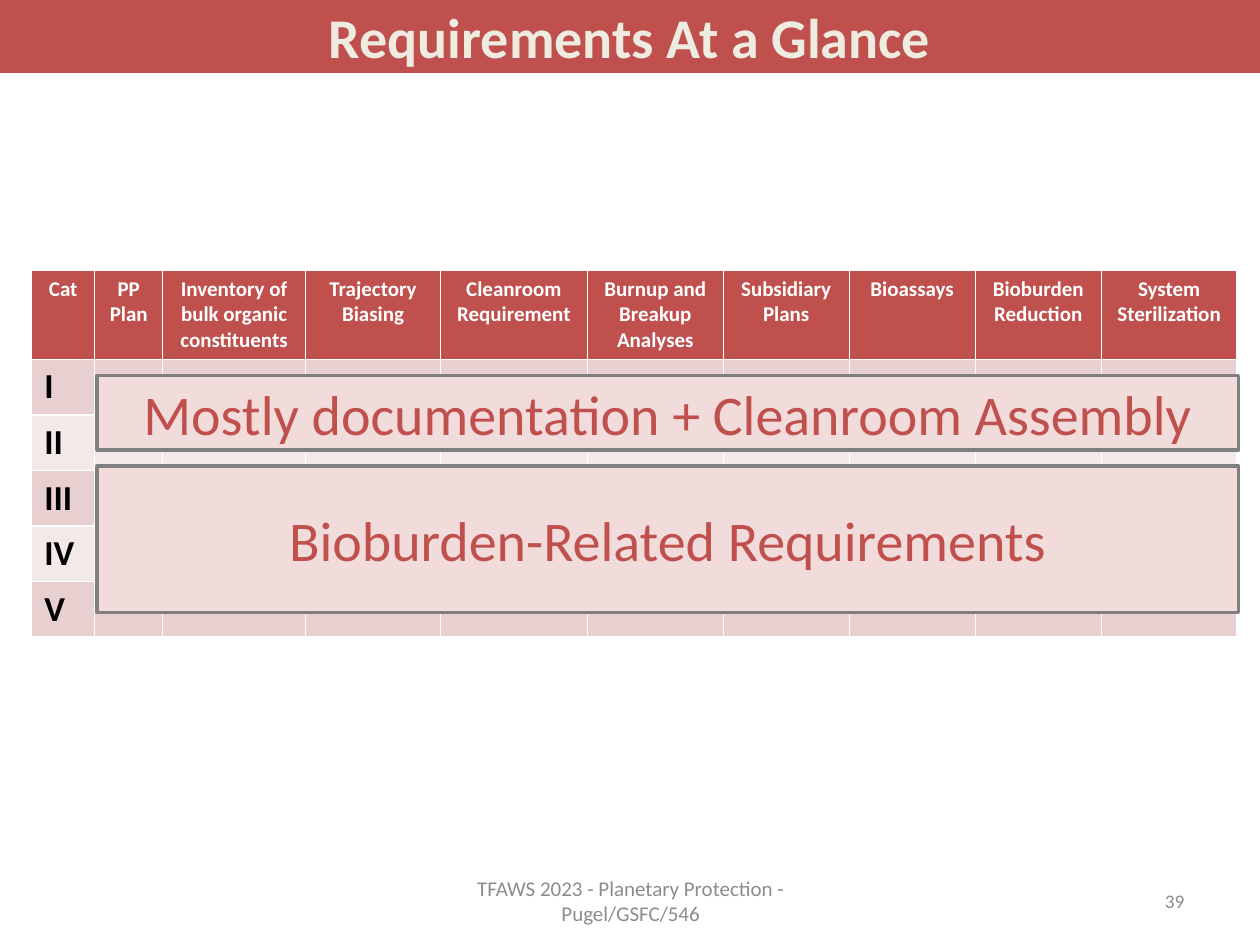
"""Build the "Requirements At a Glance" slide."""
from dataclasses import dataclass

from pptx import Presentation
from pptx.dml.color import RGBColor
from pptx.enum.shapes import MSO_SHAPE
from pptx.enum.text import MSO_ANCHOR, MSO_AUTO_SIZE, PP_ALIGN
from pptx.shapes.autoshape import Shape
from pptx.slide import Slide
from pptx.text.text import TextFrame
from pptx.util import Cm, Pt

RED = "C0504D"
CREAM = "EEECE1"
PINK = "F2DCDB"
GREY = "808080"
FOOTER_GREY = "8C8C8C"
BAND_FILLS = ("E8D0D0", "F4E9E9")
HEADER_HEIGHT, ROW_HEIGHT = 1.77, 1.1
CATEGORIES = ("I", "II", "III", "IV", "V")


@dataclass(frozen=True)
class Box:
    text: str
    left: float
    top: float
    width: float
    height: float


@dataclass(frozen=True)
class Column:
    heading: str
    width: float


TITLE = Box("Requirements At a Glance", 0, 0, 25.4, 1.47)
BANNERS = (
    Box("Bioburden-Related Requirements", 1.96, 9.4, 23.01, 2.95),
    Box("Mostly documentation + Cleanroom Assembly", 1.96, 7.57, 23.01, 1.5),
)
FOOTER = Box("TFAWS 2023 - Planetary Protection - Pugel/GSFC/546", 8.69, 17.65, 8.05, 1.02)
PAGE_NUMBER = Box("39", 18.21, 17.65, 5.92, 1.02)
COLUMNS = (
    Column("Cat", 1.27),
    Column("PP Plan", 1.37),
    Column("Inventory of bulk organic constituents", 2.88),
    Column("Trajectory Biasing", 2.72),
    Column("Cleanroom Requirement", 2.96),
    Column("Burnup and Breakup Analyses", 2.74),
    Column("Subsidiary Plans", 2.54),
    Column("Bioassays", 2.54),
    Column("Bioburden Reduction", 2.54),
    Column("System Sterilization", 2.74),
)


def color(value: str) -> RGBColor:
    """Turn a hex string into a colour."""
    return RGBColor.from_string(value)


def write(frame: TextFrame, text: str, *, size: float, ink: str, bold: bool = False,
          align: PP_ALIGN = PP_ALIGN.CENTER) -> None:
    """Put one formatted paragraph into a text frame."""
    paragraph = frame.paragraphs[0]
    paragraph.alignment = align
    run = paragraph.add_run()
    run.text = text
    run.font.name = "Calibri"
    run.font.size = Pt(size)
    run.font.bold = bold
    run.font.color.rgb = color(ink)


def bounds(box: Box) -> tuple[Cm, Cm, Cm, Cm]:
    """Return the position and size of a box as lengths."""
    return Cm(box.left), Cm(box.top), Cm(box.width), Cm(box.height)


def center_vertically(shape: Shape) -> None:
    """Wrap the text of a shape and anchor it in the middle."""
    frame = shape.text_frame
    frame.word_wrap = True
    frame.auto_size = MSO_AUTO_SIZE.NONE
    frame.vertical_anchor = MSO_ANCHOR.MIDDLE


def add_title(slide: Slide) -> None:
    """Turn the title placeholder into the red bar at the top."""
    title = slide.shapes.title
    title.left, title.top, title.width, title.height = bounds(TITLE)
    title.fill.solid()
    title.fill.fore_color.rgb = color(RED)
    center_vertically(title)
    write(title.text_frame, TITLE.text, size=32, ink=CREAM, bold=True)


def add_requirements_table(slide: Slide) -> None:
    """Add the table of categories against requirements."""
    width = sum(column.width for column in COLUMNS)
    height = HEADER_HEIGHT + ROW_HEIGHT * len(CATEGORIES)
    table = slide.shapes.add_table(len(CATEGORIES) + 1, len(COLUMNS), Cm(0.64), Cm(5.44),
                                   Cm(width), Cm(height)).table
    for index, column in enumerate(COLUMNS):
        table.columns[index].width = Cm(column.width)
        write(table.cell(0, index).text_frame, column.heading, size=12, ink="FFFFFF", bold=True)
    for index, category in enumerate(CATEGORIES, start=1):
        write(table.cell(index, 0).text_frame, category, size=20, ink="000000", bold=True,
              align=PP_ALIGN.LEFT)
    for index, row in enumerate(table.rows):
        row.height = Cm(ROW_HEIGHT if index else HEADER_HEIGHT)
        for cell in row.cells:
            cell.fill.solid()
            cell.fill.fore_color.rgb = color(BAND_FILLS[(index - 1) % 2] if index else RED)


def add_banner(slide: Slide, box: Box) -> None:
    """Add a framed banner that covers part of the table."""
    banner = slide.shapes.add_shape(MSO_SHAPE.RECTANGLE, *bounds(box))
    banner.shadow.inherit = False
    banner.fill.solid()
    banner.fill.fore_color.rgb = color(PINK)
    banner.line.color.rgb = color(GREY)
    banner.line.width = Pt(2)
    center_vertically(banner)
    write(banner.text_frame, box.text, size=32, ink=RED)


def add_label(slide: Slide, box: Box, size: float, align: PP_ALIGN) -> None:
    """Add a grey label at the foot of the slide."""
    label = slide.shapes.add_textbox(*bounds(box))
    center_vertically(label)
    write(label.text_frame, box.text, size=size, ink=FOOTER_GREY, align=align)


def main() -> None:
    """Build and save the presentation."""
    presentation = Presentation()
    presentation.slide_width, presentation.slide_height = Cm(25.4), Cm(19.05)
    slide = presentation.slides.add_slide(presentation.slide_layouts.get_by_name("Title Only"))
    add_title(slide)
    add_requirements_table(slide)
    for banner in BANNERS:
        add_banner(slide, banner)
    add_label(slide, FOOTER, 12, PP_ALIGN.CENTER)
    add_label(slide, PAGE_NUMBER, 11, PP_ALIGN.RIGHT)
    presentation.save("out.pptx")


if __name__ == "__main__":
    main()
